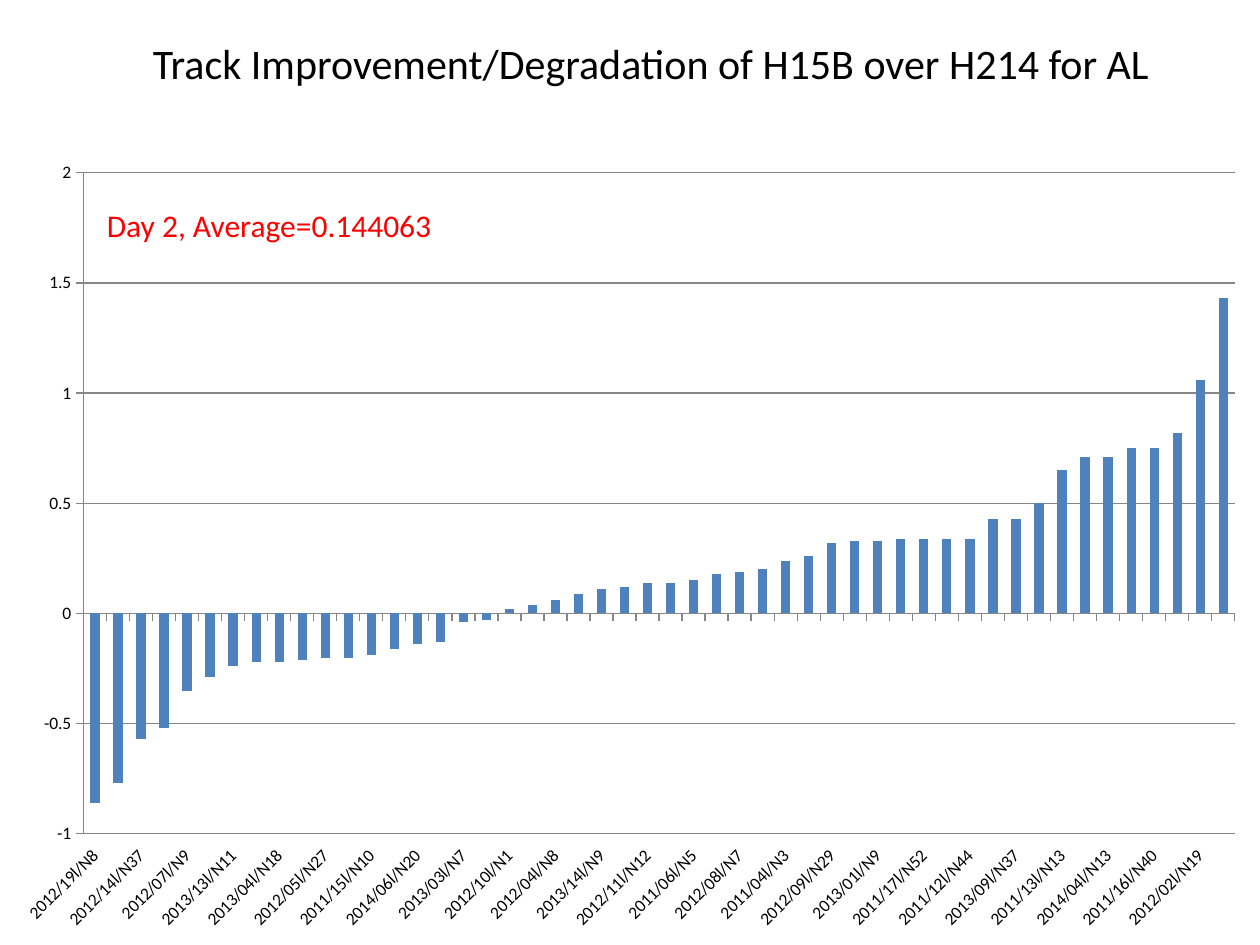
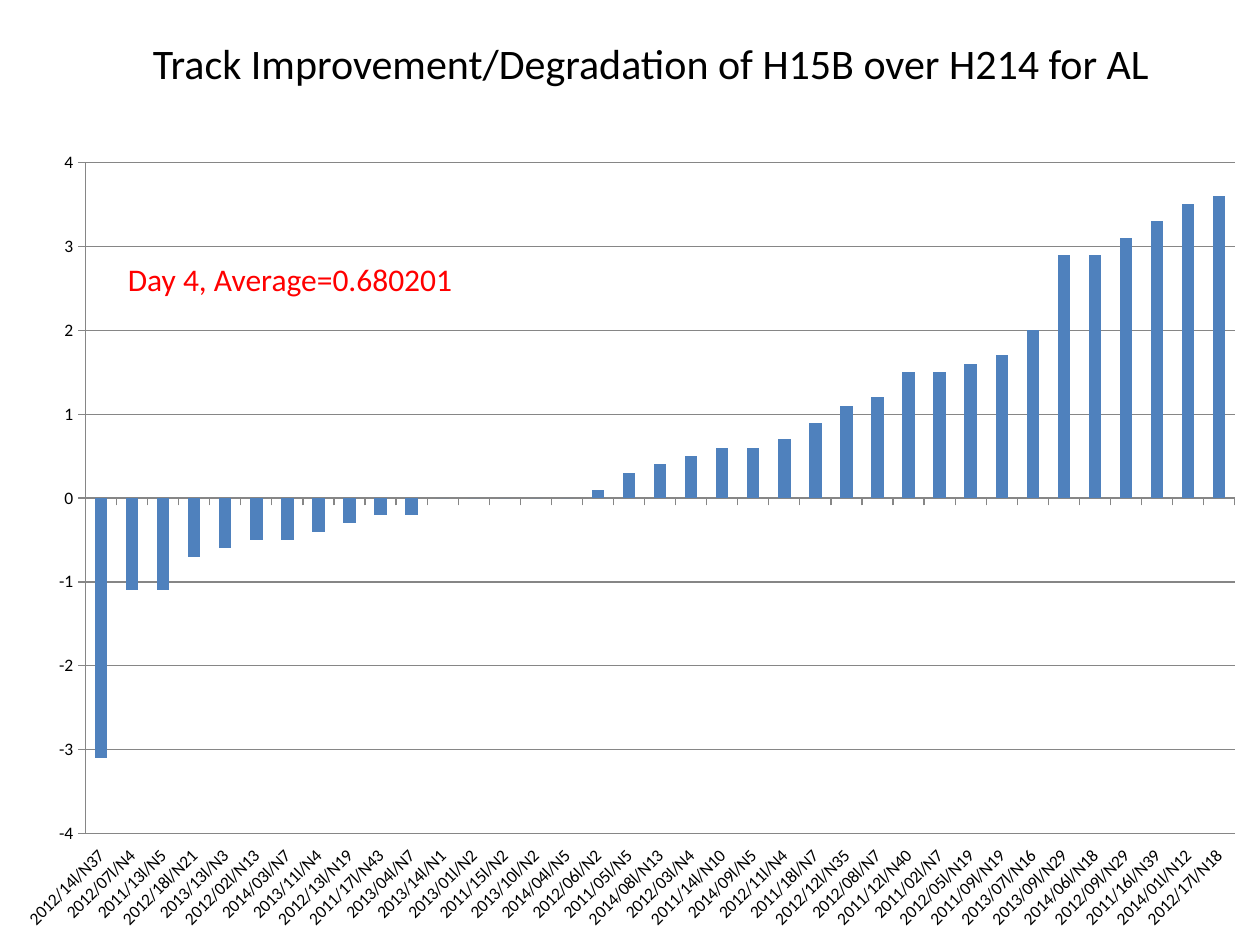
from pptx import Presentation
from pptx.chart.data import CategoryChartData
from pptx.dml.color import RGBColor
from pptx.enum.chart import XL_CHART_TYPE, XL_TICK_LABEL_POSITION, XL_TICK_MARK
from pptx.enum.text import MSO_ANCHOR, PP_ALIGN
from pptx.util import Pt

COLUMN = XL_CHART_TYPE.COLUMN_CLUSTERED
LOW = XL_TICK_LABEL_POSITION.LOW
OUT, NONE = XL_TICK_MARK.OUTSIDE, XL_TICK_MARK.NONE
CENTER, LEFT = PP_ALIGN.CENTER, PP_ALIGN.LEFT
TOP = MSO_ANCHOR.TOP

BLACK = RGBColor(0x00, 0x00, 0x00)
RED = RGBColor(0xFF, 0x00, 0x00)
BLUE = RGBColor(0x4F, 0x81, 0xBD)
GRAY = RGBColor(0x86, 0x86, 0x86)
FONT = "Calibri"
WIDTH, HEIGHT = 720, 540
TITLE = "Track Improvement/Degradation of H15B over H214 for AL"

DAY_2 = [
    ("2012/19l/N8", -0.86), ("2013/11l/N12", -0.77), ("2012/14l/N37", -0.57),
    ("2013/10l/N11", -0.52), ("2012/07l/N9", -0.35), ("2011/05l/N10", -0.29),
    ("2013/13l/N11", -0.24), ("2011/14l/N10", -0.22), ("2013/04l/N18", -0.22),
    ("2014/03l/N15", -0.21), ("2012/05l/N27", -0.2), ("2011/07l/N7", -0.2),
    ("2011/15l/N10", -0.19), ("2013/05l/N7", -0.16), ("2014/06l/N20", -0.14),
    ("2011/03l/N3", -0.13), ("2013/03l/N7", -0.04), ("2013/12l/N5", -0.03),
    ("2012/10l/N1", 0.02), ("2014/07l/N9", 0.04), ("2012/04l/N8", 0.06),
    ("2014/09l/N5", 0.09), ("2013/14l/N9", 0.11), ("2011/18l/N15", 0.12),
    ("2012/11l/N12", 0.14), ("2012/06l/N10", 0.14), ("2011/06l/N5", 0.15),
    ("2012/13l/N27", 0.18), ("2012/08l/N7", 0.19), ("2011/09l/N27", 0.2),
    ("2011/04l/N3", 0.24), ("2011/08l/N6", 0.26), ("2012/09l/N29", 0.32),
    ("2014/01l/N18", 0.33), ("2013/01l/N9", 0.33), ("2012/01l/N8", 0.34),
    ("2011/17l/N52", 0.34), ("2011/02l/N15", 0.34), ("2011/12l/N44", 0.34),
    ("2012/17l/N20", 0.43), ("2013/09l/N37", 0.43), ("2012/18l/N29", 0.5),
    ("2011/13l/N13", 0.65), ("2014/08l/N21", 0.71), ("2014/04l/N13", 0.71),
    ("2013/07l/N28", 0.75), ("2011/16l/N40", 0.75), ("2012/03l/N11", 0.82),
    ("2012/02l/N19", 1.06), ("2012/12l/N43", 1.43),
]
DAY_4 = [
    ("2012/14l/N37", -3.1), ("2012/07l/N4", -1.1), ("2011/13l/N5", -1.1),
    ("2012/18l/N21", -0.7), ("2013/13l/N3", -0.6), ("2012/02l/N13", -0.5),
    ("2014/03l/N7", -0.5), ("2013/11l/N4", -0.4), ("2012/13l/N19", -0.3),
    ("2011/17l/N43", -0.2), ("2013/04l/N7", -0.2), ("2013/14l/N1", 0),
    ("2013/01l/N2", 0), ("2011/15l/N2", 0), ("2013/10l/N2", 0),
    ("2014/04l/N5", 0), ("2012/06l/N2", 0.1), ("2011/05l/N5", 0.3),
    ("2014/08l/N13", 0.4), ("2012/03l/N4", 0.5), ("2011/14l/N10", 0.6),
    ("2014/09l/N5", 0.6), ("2012/11l/N4", 0.7), ("2011/18l/N7", 0.9),
    ("2012/12l/N35", 1.1), ("2012/08l/N7", 1.2), ("2011/12l/N40", 1.5),
    ("2011/02l/N7", 1.5), ("2012/05l/N19", 1.6), ("2011/09l/N19", 1.7),
    ("2013/07l/N16", 2), ("2013/09l/N29", 2.9), ("2014/06l/N18", 2.9),
    ("2012/09l/N29", 3.1), ("2011/16l/N39", 3.3), ("2014/01l/N12", 3.5),
    ("2012/17l/N18", 3.6),
]
# scale: lowest, highest, step; note: left, top
DAYS = [
    dict(note="Day 2, Average=0.144063", spot=(54, 114), top=84,
         scale=(-1, 2, 0.5), data=DAY_2),
    dict(note="Day 4, Average=0.680201", spot=(66, 145), top=78,
         scale=(-4, 4, 1), data=DAY_4),
]


def write(shape, text, size, color, align):
    frame = shape.text_frame
    frame.word_wrap = True
    frame.vertical_anchor = TOP
    para = frame.paragraphs[0]
    para.alignment = align
    run = para.add_run()
    run.text = text
    run.font.name = FONT
    run.font.size = Pt(size)
    run.font.color.rgb = color


def add_title(slide):
    title = slide.shapes.title
    title.left, title.top = Pt(42), Pt(18)
    title.width, title.height = Pt(660), Pt(36)
    write(title, TITLE, 24, BLACK, CENTER)


def add_bars(slide, data, top, scale):
    source = CategoryChartData()
    source.categories = [name for name, gain in data]
    source.add_series("Series 1", [gain for name, gain in data])
    chart = slide.shapes.add_chart(
        COLUMN, 0, Pt(top), Pt(WIDTH), Pt(HEIGHT - top), source).chart
    chart.has_legend = chart.has_title = False
    chart.font.name = FONT
    chart.font.size = Pt(10)
    chart.font.color.rgb = BLACK

    plot = chart.plots[0]
    plot.gap_width = 150
    plot.vary_by_categories = False
    bars = plot.series[0]
    bars.invert_if_negative = False
    bars.format.fill.solid()
    bars.format.fill.fore_color.rgb = BLUE

    names, gains = chart.category_axis, chart.value_axis
    for axis in (names, gains):
        axis.major_tick_mark, axis.minor_tick_mark = OUT, NONE
        axis.format.line.color.rgb = GRAY
        axis.format.line.width = Pt(0.75)
    names.tick_label_position = LOW
    names.has_major_gridlines = False
    gains.minimum_scale, gains.maximum_scale, gains.major_unit = scale
    gains.has_major_gridlines = True
    grid = gains.major_gridlines.format.line
    grid.color.rgb = GRAY
    grid.width = Pt(0.75)


def add_note(slide, text, spot):
    left, top = spot
    box = slide.shapes.add_textbox(Pt(left), Pt(top), Pt(282), Pt(29))
    write(box, text, 18, RED, LEFT)


def main():
    deck = Presentation()
    deck.slide_width, deck.slide_height = Pt(WIDTH), Pt(HEIGHT)
    layout = deck.slide_layouts.get_by_name("Title Only")
    for day in DAYS:
        slide = deck.slides.add_slide(layout)
        add_title(slide)
        add_bars(slide, day["data"], day["top"], day["scale"])
        add_note(slide, day["note"], day["spot"])
    deck.save("out.pptx")


if __name__ == "__main__":
    main()
